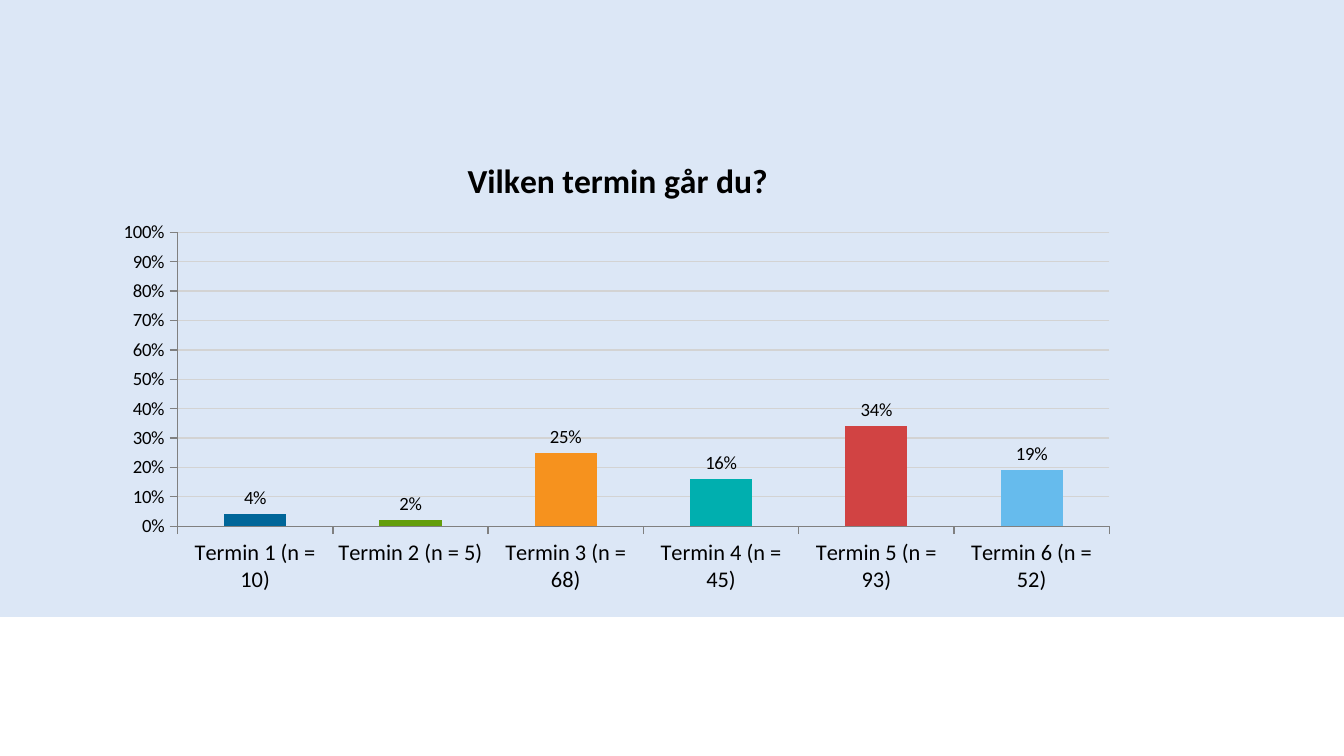
import pptx
import pptx.chart.data
import pptx.dml.color
import pptx.enum.chart
import pptx.enum.shapes
import pptx.oxml
import pptx.oxml.ns
import pptx.util

Pt = pptx.util.Pt
enum = pptx.enum.chart


def tint(code):
    return pptx.dml.color.RGBColor.from_string(code)


def style(font, size=18, color="000000", bold=False, face="Calibri"):
    font.size = Pt(size)
    font.name = face
    font.bold = bold
    font.color.rgb = tint(color)


def write(frame, text, **form):
    frame.text = text
    style(frame.paragraphs[0].runs[0].font, **form)


class Deck:
    axis = "808080"
    grid = "D3D3D3"

    def __init__(self, wide, high):
        self.file = pptx.Presentation()
        self.file.slide_width = Pt(wide)
        self.file.slide_height = Pt(high)
        self.slide = self.file.slides.add_slide(self.file.slide_layouts[6])

    def panel(self, left, top, wide, high, color):
        kind = pptx.enum.shapes.MSO_SHAPE.RECTANGLE
        box = self.slide.shapes.add_shape(kind, Pt(left), Pt(top), Pt(wide), Pt(high))
        box.shadow.inherit = False
        box.fill.solid()
        box.fill.fore_color.rgb = tint(color)
        box.line.fill.background()

    def chart(self, left, top, wide, high, title, bars):
        data = pptx.chart.data.CategoryChartData(number_format="0%")
        data.categories = [name for name, value, color in bars]
        data.add_series("Series 1", [value for name, value, color in bars])
        kind = enum.XL_CHART_TYPE.COLUMN_CLUSTERED
        chart = self.slide.shapes.add_chart(
            kind, Pt(left), Pt(top), Pt(wide), Pt(high), data).chart
        style(chart.font)
        chart.has_legend = False
        chart.has_title = True
        write(chart.chart_title.text_frame, title, size=18, bold=True)
        chart.chart_title.include_in_layout = False
        self.axes(chart)
        self.fit(chart, x=0.07, y=0.21, w=0.91, h=0.63)

        plot = chart.plots[0]
        plot.gap_width = 150
        plot.vary_by_categories = False
        row = plot.series[0]
        row.invert_if_negative = False
        for spot, (name, value, color) in enumerate(bars):
            fill = row.points[spot].format.fill
            fill.solid()
            fill.fore_color.rgb = tint(color)
        tags = row.data_labels
        tags.show_value = True
        tags.number_format = "0%"
        tags.number_format_is_linked = False
        tags.position = enum.XL_LABEL_POSITION.OUTSIDE_END
        style(tags.font, size=10)

    def axes(self, chart):
        for axis, size in ((chart.category_axis, 12), (chart.value_axis, 10)):
            axis.major_tick_mark = enum.XL_TICK_MARK.OUTSIDE
            axis.minor_tick_mark = enum.XL_TICK_MARK.NONE
            axis.format.line.color.rgb = tint(self.axis)
            axis.format.line.width = Pt(0.75)
            style(axis.tick_labels.font, size=size)
        scale = chart.value_axis
        scale.minimum_scale = 0
        scale.maximum_scale = 1
        scale.major_unit = 0.1
        scale.tick_labels.number_format = "0%"
        scale.tick_labels.number_format_is_linked = False
        scale.major_gridlines.format.line.color.rgb = tint(self.grid)
        scale.major_gridlines.format.line.width = Pt(0.75)

    def fit(self, chart, **sides):
        area = chart.element.chart.plotArea
        for old in area.findall(pptx.oxml.ns.qn("c:layout")):
            area.remove(old)
        parts = '<c:layoutTarget val="inner"/><c:xMode val="edge"/><c:yMode val="edge"/>'
        parts += "".join(f'<c:{side} val="{size}"/>' for side, size in sides.items())
        area.insert(0, pptx.oxml.parse_xml(
            f'<c:layout {pptx.oxml.ns.nsdecls("c")}>'
            f"<c:manualLayout>{parts}</c:manualLayout></c:layout>"))


def main():
    deck = Deck(720, 405)
    deck.panel(0, 0, 720, 330.5, "DCE7F6")
    bars = [
        ("Termin 1 (n = 10)", 0.04, "006699"),
        ("Termin 2 (n = 5)", 0.02, "649E0B"),
        ("Termin 3 (n = 68)", 0.25, "F6921E"),
        ("Termin 4 (n = 45)", 0.16, "00AFAF"),
        ("Termin 5 (n = 93)", 0.34, "D14343"),
        ("Termin 6 (n = 52)", 0.19, "66BBED"),
    ]
    deck.chart(56.7, 72, 548.6, 250, "Vilken termin går du?", bars)
    deck.file.save("out.pptx")


if __name__ == "__main__":
    main()
